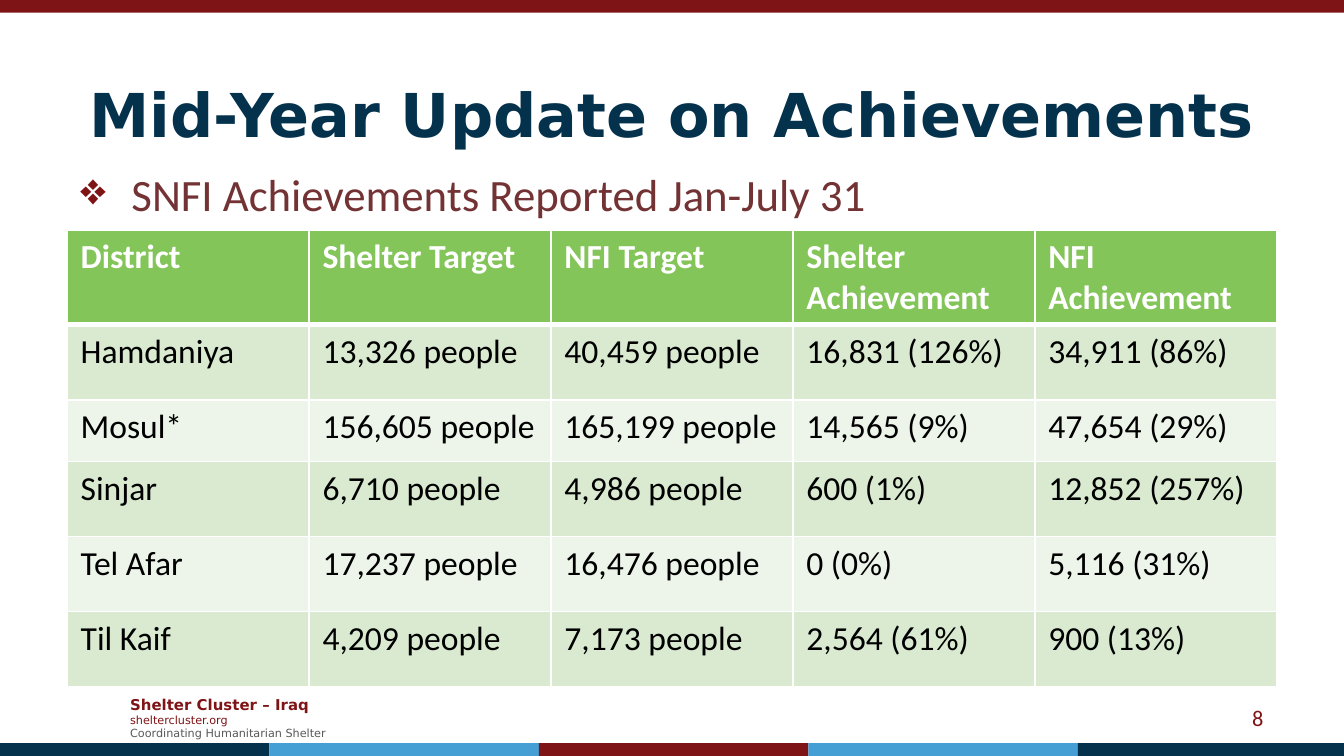
from lxml import etree
from pptx import Presentation
from pptx.dml.color import RGBColor
from pptx.enum.shapes import MSO_SHAPE
from pptx.enum.text import MSO_ANCHOR, PP_ALIGN
from pptx.oxml.ns import qn
from pptx.util import Inches, Pt

RECTANGLE = MSO_SHAPE.RECTANGLE
TOP, MIDDLE = MSO_ANCHOR.TOP, MSO_ANCHOR.MIDDLE
LEFT, CENTER, RIGHT = PP_ALIGN.LEFT, PP_ALIGN.CENTER, PP_ALIGN.RIGHT

COLUMNS, ROWS = 100, 56.25
GRID_STEP = Inches(0.1)

NAVY, BLUE, RED, MAROON = "04314C", "459FD5", "7F1416", "733234"
GREY, WHITE, BLACK = "595959", "FFFFFF", "000000"
HEADER_GREEN, BAND_GREENS = "84C559", ("D9EAD1", "EDF5EA")
HEADING_FONT, BODY_FONT = "DejaVu Sans", "Calibri"

TABLE_ROWS = [
    ("District", "Shelter Target", "NFI Target", "Shelter Achievement", "NFI Achievement"),
    ("Hamdaniya", "13,326 people", "40,459 people", "16,831 (126%)", "34,911 (86%)"),
    ("Mosul*", "156,605 people", "165,199 people", "14,565 (9%)", "47,654 (29%)"),
    ("Sinjar", "6,710 people", "4,986 people", "600 (1%)", "12,852 (257%)"),
    ("Tel Afar", "17,237 people", "16,476 people", "0 (0%)", "5,116 (31%)"),
    ("Til Kaif", "4,209 people", "7,173 people", "2,564 (61%)", "900 (13%)"),
]
ROW_HEIGHTS = [7.07, 5.58, 4.6, 5.58, 5.58, 5.58]


def color(hex_string):
    return RGBColor.from_string(hex_string)


def units(*lengths):
    """Turn grid columns or rows into slide lengths."""
    return [round(length * GRID_STEP) for length in lengths]


def text_format(size, hex_string, name=BODY_FONT, bold=False):
    return {"size": Pt(size), "name": name, "bold": bold, "color": hex_string}


def apply_format(font, values):
    for attribute, value in values.items():
        if attribute == "color":
            font.color.rgb = color(value)
        else:
            setattr(font, attribute, value)


class SlideBuilder:
    """Draws styled elements on one slide, placed in grid columns and rows."""

    def __init__(self, presentation):
        self.slide = presentation.slides.add_slide(presentation.slide_layouts[6])

    def bar(self, box, fill):
        shape = self.slide.shapes.add_shape(RECTANGLE, *units(*box))
        shape.shadow.inherit = False
        shape.fill.solid()
        shape.fill.fore_color.rgb = color(fill)
        shape.line.fill.background()

    def text(self, box, lines, alignment=LEFT, anchor=MIDDLE):
        """Add a text box with one paragraph per (text, format) pair."""
        frame = self.slide.shapes.add_textbox(*units(*box)).text_frame
        frame.word_wrap = True
        frame.vertical_anchor = anchor
        for index, (words, values) in enumerate(lines):
            paragraph = frame.add_paragraph() if index else frame.paragraphs[0]
            paragraph.alignment = alignment
            run = paragraph.add_run()
            run.text = words
            apply_format(run.font, values)
        return frame

    def bullet(self, box, words, values, symbol, symbol_color, indent):
        paragraph = self.text(box, [(words, values)], anchor=TOP).paragraphs[0]
        properties = paragraph._p.get_or_add_pPr()
        hanging = units(indent)[0]
        properties.set("marL", str(hanging))
        properties.set("indent", str(-hanging))
        bullet_color = etree.SubElement(properties, qn("a:buClr"))
        etree.SubElement(bullet_color, qn("a:srgbClr"), val=symbol_color)
        etree.SubElement(properties, qn("a:buChar"), char=symbol)
        apply_format(paragraph.font, values)

    def table(self, box, rows, heights):
        table = self.slide.shapes.add_table(len(rows), len(rows[0]), *units(*box)).table
        for row, height in zip(table.rows, units(*heights)):
            row.height = height
        for row_index, texts in enumerate(rows):
            is_header = row_index == 0
            fill = HEADER_GREEN if is_header else BAND_GREENS[(row_index - 1) % 2]
            values = text_format(18, WHITE if is_header else BLACK, bold=is_header)
            for column_index, words in enumerate(texts):
                cell = table.cell(row_index, column_index)
                self.borders(cell, top=3 if row_index == 1 else 1, bottom=3 if is_header else 1)
                cell.fill.solid()
                cell.fill.fore_color.rgb = color(fill)
                run = cell.text_frame.paragraphs[0].add_run()
                run.text = words
                apply_format(run.font, values)

    def borders(self, cell, top, bottom):
        properties = cell._tc.get_or_add_tcPr()
        for side, width in {"L": 1, "R": 1, "T": top, "B": bottom}.items():
            line = etree.SubElement(properties, qn(f"a:ln{side}"), w=str(Pt(width)))
            line_fill = etree.SubElement(line, qn("a:solidFill"))
            etree.SubElement(line_fill, qn("a:srgbClr"), val=WHITE)


def main():
    presentation = Presentation()
    presentation.slide_width, presentation.slide_height = units(COLUMNS, ROWS)
    builder = SlideBuilder(presentation)

    builder.text((8.7, 51.2, 17.3, 4.4), [
        ("Shelter Cluster – Iraq", text_format(8, RED, HEADING_FONT, True)),
        ("sheltercluster.org", text_format(6, RED, HEADING_FONT)),
        ("Coordinating Humanitarian Shelter", text_format(6, GREY, HEADING_FONT)),
    ])

    builder.bar((0, 0, COLUMNS, 0.95), RED)
    band_width, band_height = 20.05, 0.95
    for index, fill in enumerate([NAVY, BLUE, RED, BLUE, NAVY]):
        left = index * band_width
        width = min(band_width, COLUMNS - left)
        builder.bar((left, ROWS - band_height, width, band_height), fill)

    title_format = text_format(32.4, NAVY, HEADING_FONT, True)
    builder.text((5, 3.75, 90, 9.4), [("Mid-Year Update on Achievements", title_format)], CENTER)
    builder.bullet((5, 11.9, 90, 37.1), "SNFI Achievements Reported Jan-July 31",
                   text_format(24, MAROON), "❖", RED, 3.8)
    builder.text((71.7, 51.9, 23.3, 3), [("8", text_format(12, RED))], RIGHT)
    builder.table((5, 17.1, 90, sum(ROW_HEIGHTS)), TABLE_ROWS, ROW_HEIGHTS)

    presentation.save("out.pptx")


if __name__ == "__main__":
    main()
